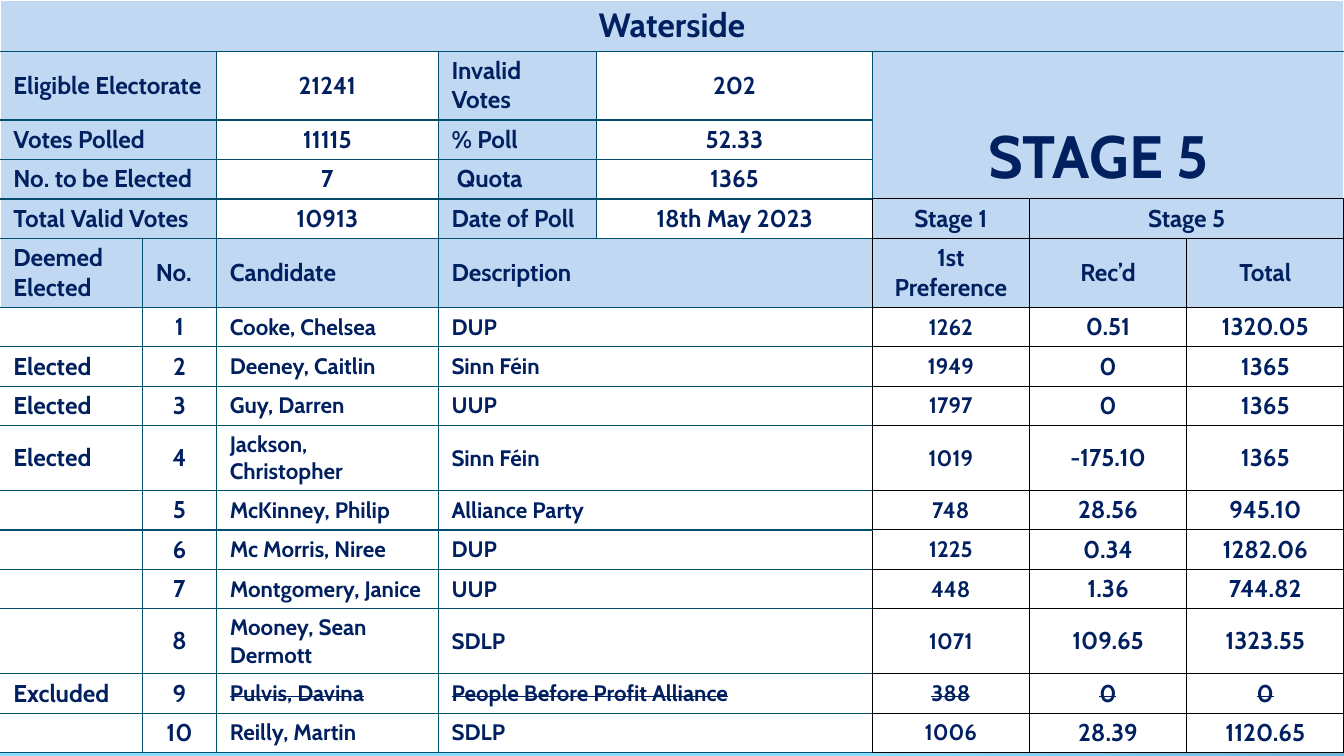
"""Build the Waterside stage 5 count sheet."""
from lxml import etree
from pptx import Presentation
from pptx.dml.color import RGBColor
from pptx.enum import text
from pptx.oxml import ns
from pptx.util import Inches, Pt


class Theme:
    font = "Cabin"
    ink, pale, white = "002060", "C1D8F2", "FFFFFF"
    teal, black = "004E6C", "000000"
    dark, sky = "0D3868", "8ADFFF"
    head, stage, body, small = 18, 32, 13, 12


def edge(cell, side, color, width):
    props = cell._tc.get_or_add_tcPr()
    line = etree.SubElement(props, ns.qn("a:ln" + side), w=str(Pt(width)))
    fill = etree.SubElement(line, ns.qn("a:solidFill"))
    etree.SubElement(fill, ns.qn("a:srgbClr"), val=color)


widths = [1.06, 0.55, 1.65, 1.18, 2.05, 1.17, 1.17, 1.17]
facts = [
    ["Waterside"],
    ["Eligible Electorate", "", "21241", "Invalid Votes", "202", "STAGE 5 "],
    ["Votes Polled", "", "11115", "% Poll", "52.33"],
    ["No. to be Elected", "", "7", " Quota", "1365"],
    ["Total Valid Votes", "", "10913", "Date of Poll", "18th May 2023", "Stage 1", "Stage 5"],
    ["Deemed Elected", "No.", "Candidate", "Description", "", "1st Preference", "Rec’d", "Total"],
]
votes = [
    ("", "Cooke, Chelsea", "DUP", "1262", "0.51", "1320.05"),
    ("Elected", "Deeney, Caitlin", "Sinn Féin", "1949", "0", "1365"),
    ("Elected", "Guy, Darren", "UUP", "1797", "0", "1365"),
    ("Elected", "Jackson, Christopher", "Sinn Féin", "1019", "-175.10", "1365"),
    ("", "McKinney, Philip", "Alliance Party", "748", "28.56", "945.10"),
    ("", "Mc Morris, Niree", "DUP", "1225", "0.34", "1282.06"),
    ("", "Montgomery, Janice", "UUP", "448", "1.36", "744.82"),
    ("", "Mooney, Sean Dermott", "SDLP", "1071", "109.65", "1323.55"),
    ("Excluded", "Pulvis, Davina", "People Before Profit Alliance", "388", "0", "0"),
    ("", "Reilly, Martin", "SDLP", "1006", "28.39", "1120.65"),
]
rows = facts + [
    [state, str(num), name, party, "", first, gain, total]
    for num, (state, name, party, first, gain, total) in enumerate(votes, 1)
]
top = len(facts)

deck = Presentation()
deck.slide_width, deck.slide_height = Inches(10), Inches(10) * 9 // 16
slide = deck.slides.add_slide(deck.slide_layouts[6])

back = slide.background.fill
back.gradient()
back.gradient_angle = 258
for stop, color, place in zip(back.gradient_stops, (Theme.dark, Theme.sky), (0.42, 0.82)):
    stop.color.rgb = RGBColor.from_string(color)
    stop.position = place

frame = slide.shapes.add_table(len(rows), len(widths), 0, 0, Inches(10), Inches(5.15))
table = frame.table
table.first_row = table.horz_banding = False
for col, width in zip(table.columns, widths):
    col.width = Inches(width)
for r, row in enumerate(table.rows):
    row.height = Inches({0: 0.37, 5: 0.48}.get(r, 0.28))
frame.height = Inches(5.15)

table.cell(0, 0).merge(table.cell(0, 7))
table.cell(1, 5).merge(table.cell(3, 7))
table.cell(4, 6).merge(table.cell(4, 7))
for r in range(1, 5):
    table.cell(r, 0).merge(table.cell(r, 1))
for r in range(5, len(rows)):
    table.cell(r, 3).merge(table.cell(r, 4))

for r, row in enumerate(rows):
    for c in range(len(widths)):
        cell = table.cell(r, c)
        if cell.is_spanned:
            continue
        words = row[c] if c < len(row) else ""
        fact, vote, stage = 1 <= r <= 4, r >= top, (r, c) == (1, 5)

        teal, black, white = (Theme.teal, 0.75), (Theme.black, 0.5), (Theme.white, 1)
        base = teal if c < 5 or stage else black
        left = white if c == 0 else base
        right = white if r == 0 or stage else base
        if r >= 4 and c + cell.span_width == 5:
            right = black
        edge(cell, "L", *left)
        edge(cell, "R", *right)
        edge(cell, "T", *(white if r == 0 else base))
        edge(cell, "B", *(black if stage else base))

        shade = not vote and not (fact and c in (2, 4))
        cell.fill.solid()
        cell.fill.fore_color.rgb = RGBColor.from_string(Theme.pale if shade else Theme.white)
        cell.margin_top = cell.margin_bottom = Inches(0.15) // 4
        cell.vertical_anchor = text.MSO_ANCHOR.BOTTOM if stage else text.MSO_ANCHOR.MIDDLE

        para = cell.text_frame.paragraphs[0]
        mid = r == 0 or c >= 5 or (fact and c in (2, 4)) or (vote and c == 1)
        para.alignment = text.PP_ALIGN.CENTER if mid else text.PP_ALIGN.LEFT
        size = Theme.small if vote and c in (2, 3, 5) else Theme.body
        size = Theme.head if r == 0 else Theme.stage if stage else size
        font = para.font
        font.name, font.size, font.bold = Theme.font, Pt(size), True
        font.color.rgb = RGBColor.from_string(Theme.ink)
        if row[0] == "Excluded" and c >= 2:
            font._element.set("strike", "sngStrike")
        if words:
            para.add_run().text = words
        else:
            end = etree.SubElement(para._p, ns.qn("a:endParaRPr"))
            end.set("sz", str(size * 100))
        if stage:
            tail = para.add_run()
            tail.text = " "
            tail.font.size = Pt(Theme.body)

deck.save("out.pptx")
